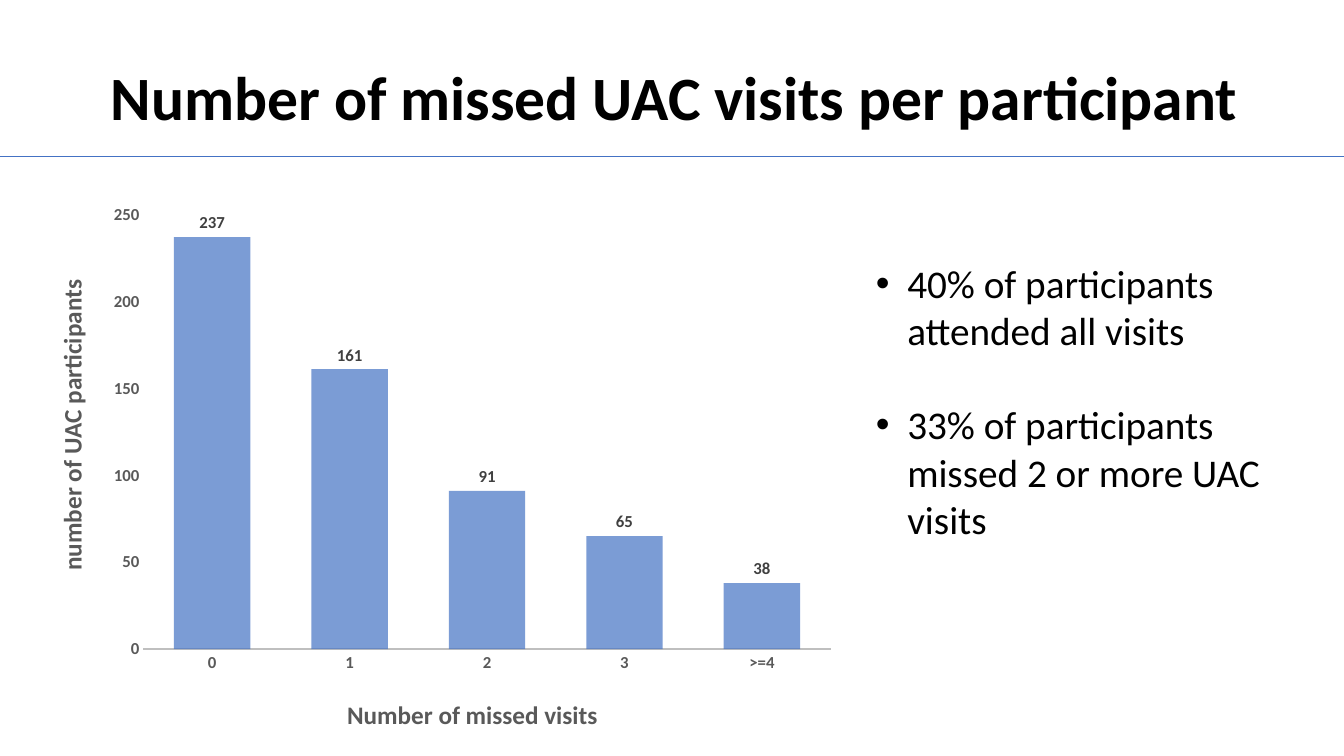
from lxml import etree
from pptx import Presentation
from pptx.chart.data import CategoryChartData
from pptx.dml.color import RGBColor
from pptx.enum.chart import XL_CHART_TYPE as Chart, XL_LABEL_POSITION as LabelPos
from pptx.enum.chart import XL_TICK_MARK as Tick
from pptx.enum.shapes import MSO_CONNECTOR as Connector
from pptx.enum.text import MSO_ANCHOR as Anchor, MSO_AUTO_SIZE as AutoSize, PP_ALIGN as Align
from pptx.oxml.ns import qn
from pptx.util import Pt

WIDTH, HEIGHT = 960, 540


def color(value):
    return RGBColor.from_string(value)


def add_xml(parent, tag, **attrs):
    return etree.SubElement(parent, qn(tag), attrs)


class Deck:
    """Style and current slide; lengths in points."""
    font = "Calibri"
    black, gray, dark, pale, blue = "000000", "595959", "404040", "BFBFBF", "4472C4"

    def __init__(self, prs):
        self.s = prs.slides.add_slide(prs.slide_layouts[5])

    def style(self, font, hex_color, **fmt):
        for name, value in {"name": self.font, **fmt}.items():
            setattr(font, name, value)
        font.color.rgb = color(hex_color)

    def title(self, text, box):
        sp = self.s.shapes.title
        for name, value in zip(("left", "top", "width", "height"), box):
            setattr(sp, name, Pt(value))
        tf = sp.text_frame
        tf.text = text
        tf.word_wrap, tf.auto_size, tf.vertical_anchor = True, AutoSize.NONE, Anchor.MIDDLE
        p = tf.paragraphs[0]
        p.alignment, p.line_spacing = Align.LEFT, 0.9
        self.style(p.runs[0].font, self.black, size=Pt(44), bold=True)

    def rule(self, y):
        line = self.s.shapes.add_connector(Connector.STRAIGHT, 0, Pt(y), Pt(WIDTH), Pt(y))
        line.line.color.rgb = color(self.blue)
        line.line.width = Pt(1)
        add_xml(line._element.spPr, "a:effectLst")

    def bullets(self, items, box, gap):
        tf = self.s.shapes.add_textbox(*map(Pt, box)).text_frame
        tf.word_wrap = True
        for i, text in enumerate(items):
            p = tf.paragraphs[0] if i == 0 else tf.add_paragraph()
            r = p.add_run()
            r.text = text
            self.style(r.font, self.black, size=Pt(28))
            p.space_before = Pt(gap if i else 0)
            pPr = p._p.get_or_add_pPr()
            pPr.set("marL", str(Pt(22.5)))
            pPr.set("indent", str(-Pt(22.5)))
            add_xml(pPr, "a:buFont", typeface="Arial")
            add_xml(pPr, "a:buChar", char="•")

    def place(self, parent, **fractions):
        """Manual chart layout, in fractions of the chart area."""
        layout = parent.find(qn("c:layout"))
        if layout is None:
            layout = parent.makeelement(qn("c:layout"), {})
            text = parent.find(qn("c:tx"))
            parent.insert(0 if text is None else parent.index(text) + 1, layout)
        manual = add_xml(layout, "c:manualLayout")
        if "w" in fractions:
            add_xml(manual, "c:layoutTarget", val="inner")
        for name in "xy":
            add_xml(manual, f"c:{name}Mode", val="edge")
        for name, value in fractions.items():
            add_xml(manual, f"c:{name}", val=str(value))

    def axis(self, axis, text, x, y):
        axis.has_major_gridlines = False
        axis.major_tick_mark = axis.minor_tick_mark = Tick.NONE
        self.style(axis.tick_labels.font, self.gray, size=Pt(12), bold=True)
        title = axis.axis_title
        title.text_frame.text = text
        self.style(title.text_frame.paragraphs[0].runs[0].font, self.gray,
                   size=Pt(18), bold=True)
        self.place(title._element, x=x, y=y)

    def columns(self, categories, values, titles, box):
        data = CategoryChartData()
        data.categories = categories
        data.add_series("Series 1", values)
        chart = self.s.shapes.add_chart(Chart.COLUMN_CLUSTERED, *map(Pt, box), data).chart
        chart.has_legend = chart.has_title = False
        self.style(chart.font, self.black, size=Pt(10))
        # Axes
        cat, val = chart.category_axis, chart.value_axis
        self.axis(cat, titles[0], 0.38, 0.91)
        self.axis(val, titles[1], 0.02, 0.15)
        cat.format.line.color.rgb = color(self.pale)
        cat.format.line.width = Pt(1.25)
        val.format.line.fill.background()
        val.minimum_scale, val.maximum_scale, val.major_unit = 0, 250, 50
        # Columns, 70% opaque
        plot = chart.plots[0]
        plot.gap_width, plot.overlap, plot.vary_by_categories = 80, 25, False
        fill = plot.series[0].format.fill
        fill.solid()
        fill.fore_color.rgb = color(self.blue)
        rgb = next(plot.series[0]._element.iter(qn("a:srgbClr")))
        add_xml(rgb, "a:alpha", val="70000")
        # Value labels
        plot.has_data_labels = True
        labels = plot.data_labels
        labels.show_value, labels.position = True, LabelPos.OUTSIDE_END
        self.style(labels.font, self.dark, size=Pt(12), bold=True)
        plot_area = chart._chartSpace.chart.plotArea
        self.place(plot_area, x=0.135, y=0.04, w=0.845, h=0.79)


def main():
    prs = Presentation()
    prs.slide_width, prs.slide_height = Pt(WIDTH), Pt(HEIGHT)
    deck = Deck(prs)
    # Heading
    deck.title("Number of missed UAC visits per participant", (72, 20, 842, 104))
    deck.rule(111.6)
    # Chart
    deck.columns(["0", "1", "2", "3", ">=4"], [237, 161, 91, 65, 38],
                 ["Number of missed visits", "number of UAC participants"],
                 (24, 137.5, 581, 393))
    # Findings
    deck.bullets(["40% of participants attended all visits",
                  "33% of participants missed 2 or more UAC visits"],
                 (618.5, 181.5, 314.6, 232.6), gap=34)
    prs.save("out.pptx")


if __name__ == "__main__":
    main()
